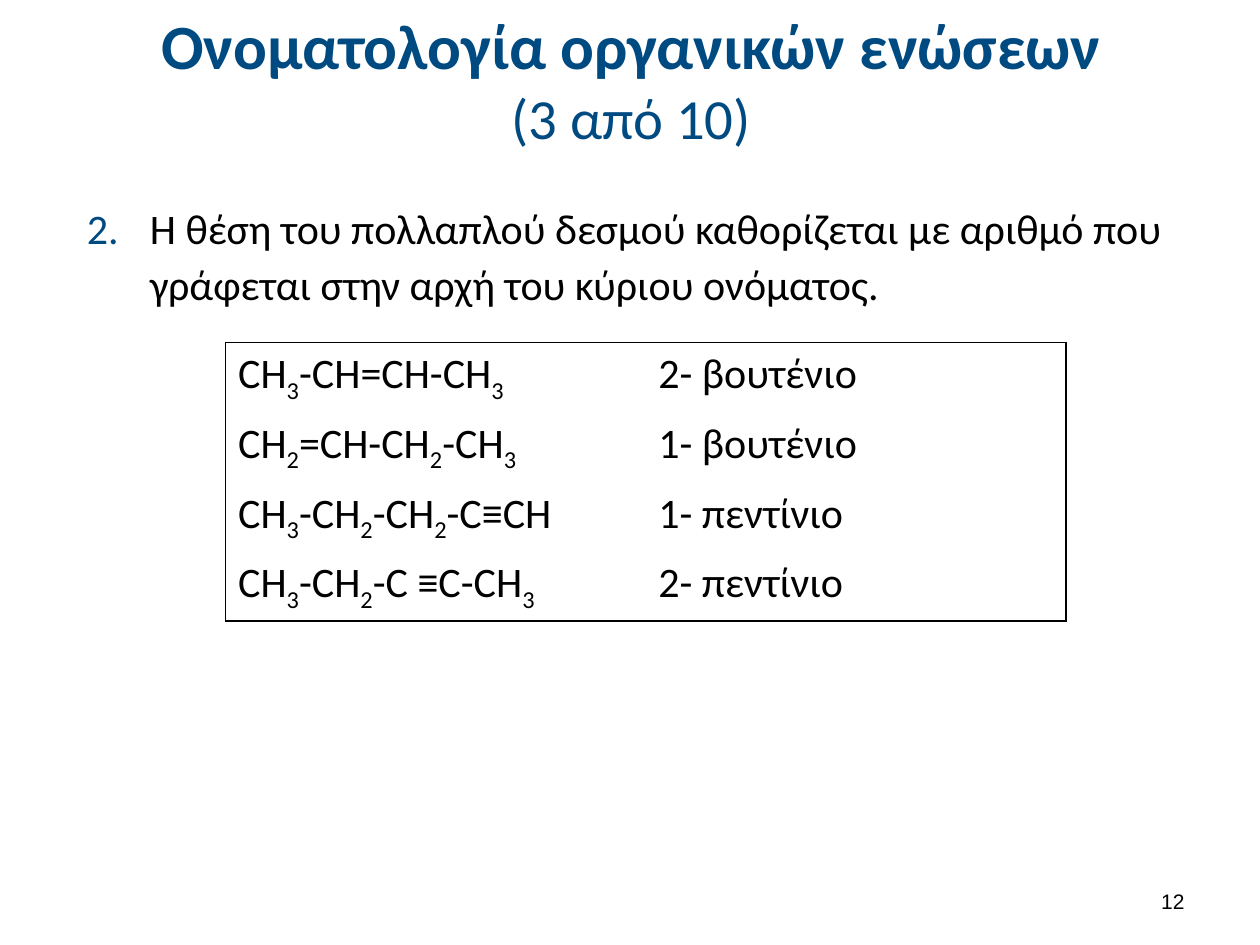
from dataclasses import dataclass
from itertools import groupby

from lxml import etree
from pptx import Presentation
from pptx.dml.color import RGBColor
from pptx.enum.text import MSO_ANCHOR, MSO_AUTO_SIZE, PP_ALIGN
from pptx.oxml.ns import qn
from pptx.util import Inches, Pt

MIDDLE, TOP = MSO_ANCHOR.MIDDLE, MSO_ANCHOR.TOP
CENTER, RIGHT = PP_ALIGN.CENTER, PP_ALIGN.RIGHT
NO_FIT = MSO_AUTO_SIZE.NONE


@dataclass(frozen=True)
class Theme:
    blue: str = "004A82"
    ink: str = "000000"
    font: str = "Calibri"
    plain: str = "Arial"
    head: float = 36
    sub: float = 32.4
    body: float = 24
    note: float = 12


THEME = Theme()
RULE = ("Η θέση του πολλαπλού δεσμού καθορίζεται με αριθμό που "
        "γράφεται στην αρχή του κύριου ονόματος.")
NAMES = [
    ("CH3-CH=CH-CH3", "2- βουτένιο"),
    ("CH2=CH-CH2-CH3", "1- βουτένιο"),
    ("CH3-CH2-CH2-C≡CH", "1- πεντίνιο"),
    ("CH3-CH2-C ≡C-CH3", "2- πεντίνιο"),
]


def add_run(para, text, size, color=THEME.ink, font=THEME.font, bold=False):
    run = para.add_run()
    run.text = text
    run.font.size = Pt(size)
    run.font.name = font
    run.font.bold = bold
    run.font.color.rgb = RGBColor.from_string(color)
    return run


def place(shape, box, anchor):
    """Move a text shape to its box and return its first paragraph."""
    shape.left, shape.top, shape.width, shape.height = map(Inches, box)
    frame = shape.text_frame
    frame.word_wrap = True
    frame.auto_size = NO_FIT
    frame.vertical_anchor = anchor
    return frame.paragraphs[0]


def add_title(slide, box):
    para = place(slide.shapes.title, box, MIDDLE)
    para.alignment = CENTER
    add_run(para, "Ονοματολογία οργανικών ενώσεων", THEME.head, THEME.blue, bold=True)
    para.add_line_break()
    add_run(para, "(3 από 10)", THEME.sub, THEME.blue)


def add_rule(slide, box):
    para = place(slide.placeholders[1], box, TOP)
    props = para._p.get_or_add_pPr()
    props.set("marL", str(Inches(0.5)))
    props.set("indent", str(-Inches(0.5)))
    # Blue number, counted from two
    tint = etree.SubElement(props, qn("a:buClr"))
    etree.SubElement(tint, qn("a:srgbClr"), val=THEME.blue)
    etree.SubElement(props, qn("a:buFont"), typeface="+mj-lt")
    etree.SubElement(props, qn("a:buAutoNum"), type="arabicPeriod", startAt="2")
    para.line_spacing = 1.12
    para.space_before = Pt(0)
    add_run(para, RULE, THEME.body)


def add_formula(para, text):
    """Write a formula with its digits as subscripts."""
    for digit, chars in groupby(text, str.isdigit):
        run = add_run(para, "".join(chars), THEME.body)
        if digit:
            run._r.get_or_add_rPr().set("baseline", "-25000")


def set_edges(cell, edges):
    """Draw the named edges of a cell and hide the others."""
    props = cell._tc.get_or_add_tcPr()
    for spot, side in enumerate("LRTB"):
        line = etree.Element(qn(f"a:ln{side}"), w=str(Pt(1)))
        if side in edges:
            fill = etree.SubElement(line, qn("a:solidFill"))
            etree.SubElement(fill, qn("a:srgbClr"), val=THEME.ink)
        else:
            etree.SubElement(line, qn("a:noFill"))
        props.insert(spot, line)


def add_names(slide, box):
    last = len(NAMES) - 1
    table = slide.shapes.add_table(len(NAMES), 2, *map(Inches, box)).table
    table.first_row = table.horz_banding = False
    for r, (formula, name) in enumerate(NAMES):
        left, right = table.cell(r, 0), table.cell(r, 1)
        add_formula(left.text_frame.paragraphs[0], formula)
        add_run(right.text_frame.paragraphs[0], name, THEME.body)
        ends = "T" * (r == 0) + "B" * (r == last)
        for cell, side in ((left, "L"), (right, "R")):
            cell.fill.background()
            set_edges(cell, side + ends)


def add_number(slide, box):
    para = place(slide.shapes.add_textbox(0, 0, 0, 0), box, MIDDLE)
    para.alignment = RIGHT
    add_run(para, "12", THEME.note, font=THEME.plain)


def main():
    deck = Presentation()
    deck.slide_width, deck.slide_height = Inches(10), Inches(7.5)
    slide = deck.slides.add_slide(deck.slide_layouts[1])
    add_title(slide, (0.51, 0.13, 9, 0.99))
    add_rule(slide, (0.59, 1.51, 9, 1))
    add_names(slide, (1.79, 2.72, 6.67, 2.2))
    add_number(slide, (7.17, 6.95, 2.33, 0.4))
    deck.save("out.pptx")


if __name__ == "__main__":
    main()
